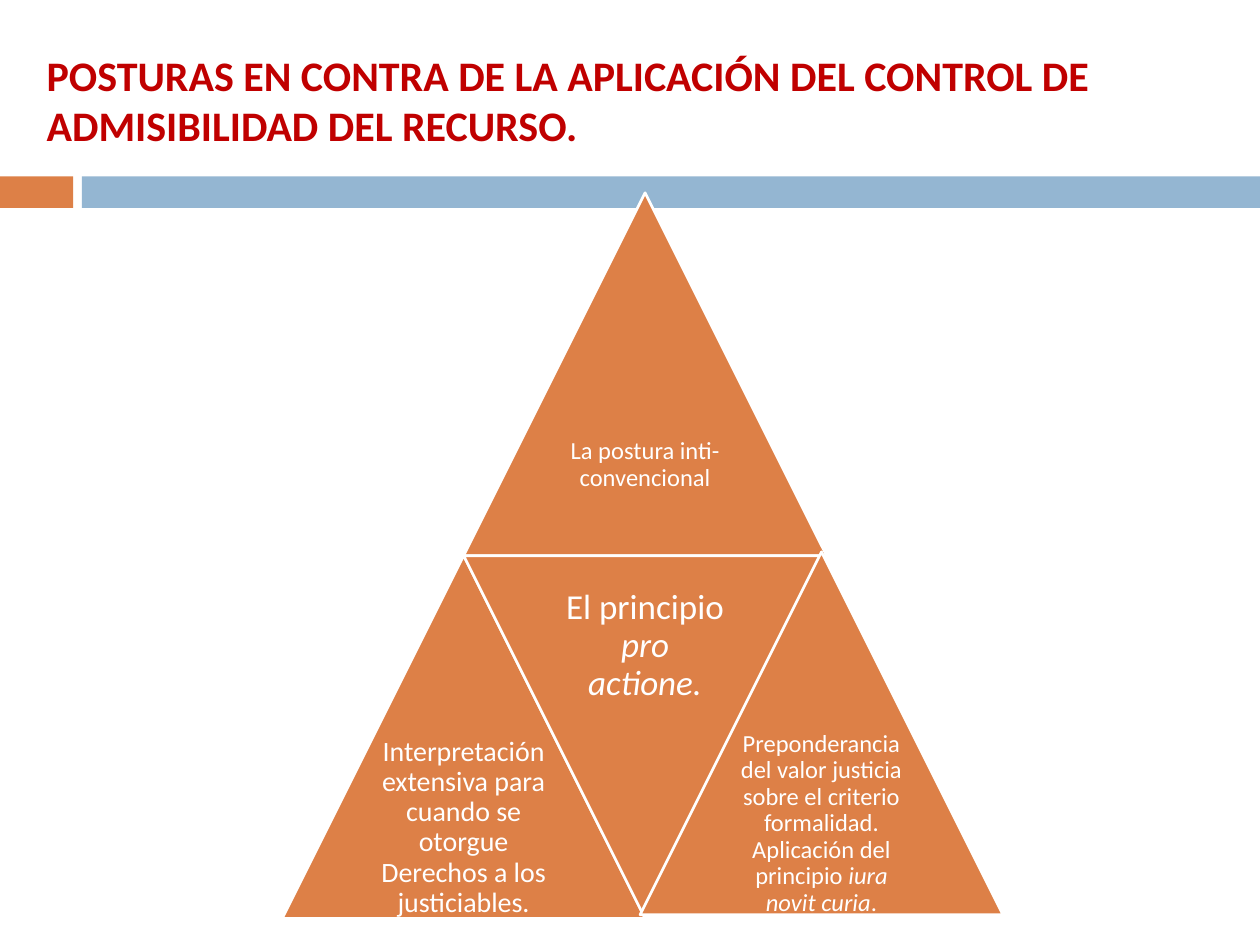
from pptx import Presentation
from pptx.dml.color import RGBColor
from pptx.enum.shapes import MSO_SHAPE
from pptx.enum.text import MSO_ANCHOR, PP_ALIGN
from pptx.util import Pt

RECTANGLE = MSO_SHAPE.RECTANGLE
TRIANGLE = MSO_SHAPE.ISOSCELES_TRIANGLE
MIDDLE = MSO_ANCHOR.MIDDLE
LEFT, CENTER = PP_ALIGN.LEFT, PP_ALIGN.CENTER

PX = 9144
FONT = "Calibri"
ORANGE, BLUE, WHITE, RED = "DD8047", "94B6D2", "FFFFFF", "C00000"
SIDE = 288
INSET = 5

TITLE = "POSTURAS EN CONTRA DE LA APLICACIÓN DEL CONTROL DE ADMISIBILIDAD DEL RECURSO."
BARS = [(0, 58, ORANGE), (65, 935, BLUE)]
TRIANGLES = [
    {"at": (368, 153), "size": 14, "inverted": False,
     "spans": [("La postura inti-convencional", False)]},
    {"at": (224, 441), "size": 16, "inverted": False,
     "spans": [("Interpretación extensiva para cuando se otorgue Derechos a los justiciables.", False)]},
    {"at": (368, 441), "size": 20, "inverted": True,
     "spans": [("El principio ", False), ("pro actione.", True)]},
    {"at": (508, 438), "size": 14, "inverted": False,
     "spans": [("Preponderancia del valor justicia sobre el criterio formalidad. "
                "Aplicación del principio ", False),
               ("iura novit curia", True), (".", False)]},
]


def color(value):
    return RGBColor.from_string(value)


def add_filled(page, kind, bounds, fill):
    shape = page.shapes.add_shape(kind, *(length * PX for length in bounds))
    shape.shadow.inherit = False
    shape.fill.solid()
    shape.fill.fore_color.rgb = color(fill)
    shape.line.fill.background()
    return shape


def add_text(page, bounds, spans, size, ink, align, insets):
    box = page.shapes.add_textbox(*(length * PX for length in bounds))
    frame = box.text_frame
    frame.word_wrap = True
    frame.vertical_anchor = MIDDLE
    (frame.margin_left, frame.margin_top,
     frame.margin_right, frame.margin_bottom) = (inset * PX for inset in insets)
    para = frame.paragraphs[0]
    para.alignment = align
    para.font.name = FONT
    para.font.size = Pt(size)
    para.font.color.rgb = color(ink)
    for text, italic in spans:
        span = para.add_run()
        span.text = text
        if italic:
            span.font.italic = True
    return para


def add_triangle(page, item):
    left, top = item["at"]
    shape = add_filled(page, TRIANGLE, (left, top, SIDE, SIDE), ORANGE)
    shape.line.color.rgb = color(WHITE)
    shape.line.width = Pt(1.5)
    half = SIDE // 2
    text_top = top if item["inverted"] else top + half
    if item["inverted"]:
        shape.rotation = 180
    inset = 8 if item["inverted"] else INSET
    para = add_text(page, (left + half // 2, text_top, half, half), item["spans"],
                    item["size"], WHITE, CENTER, [inset] * 4)
    para.line_spacing = 0.9


def main():
    deck = Presentation()
    deck.slide_width, deck.slide_height = 1000 * PX, 750 * PX
    page = deck.slides.add_slide(deck.slide_layouts[6])
    for left, width, fill in BARS:
        add_filled(page, RECTANGLE, (left, 140, width, 25), fill)
    for item in TRIANGLES:
        add_triangle(page, item)
    title = add_text(page, (20, 25, 969, 108), [(TITLE, False)], 24, RED, LEFT, (17, 5, 10, 5))
    title.font.bold = True
    deck.save("out.pptx")


if __name__ == "__main__":
    main()
